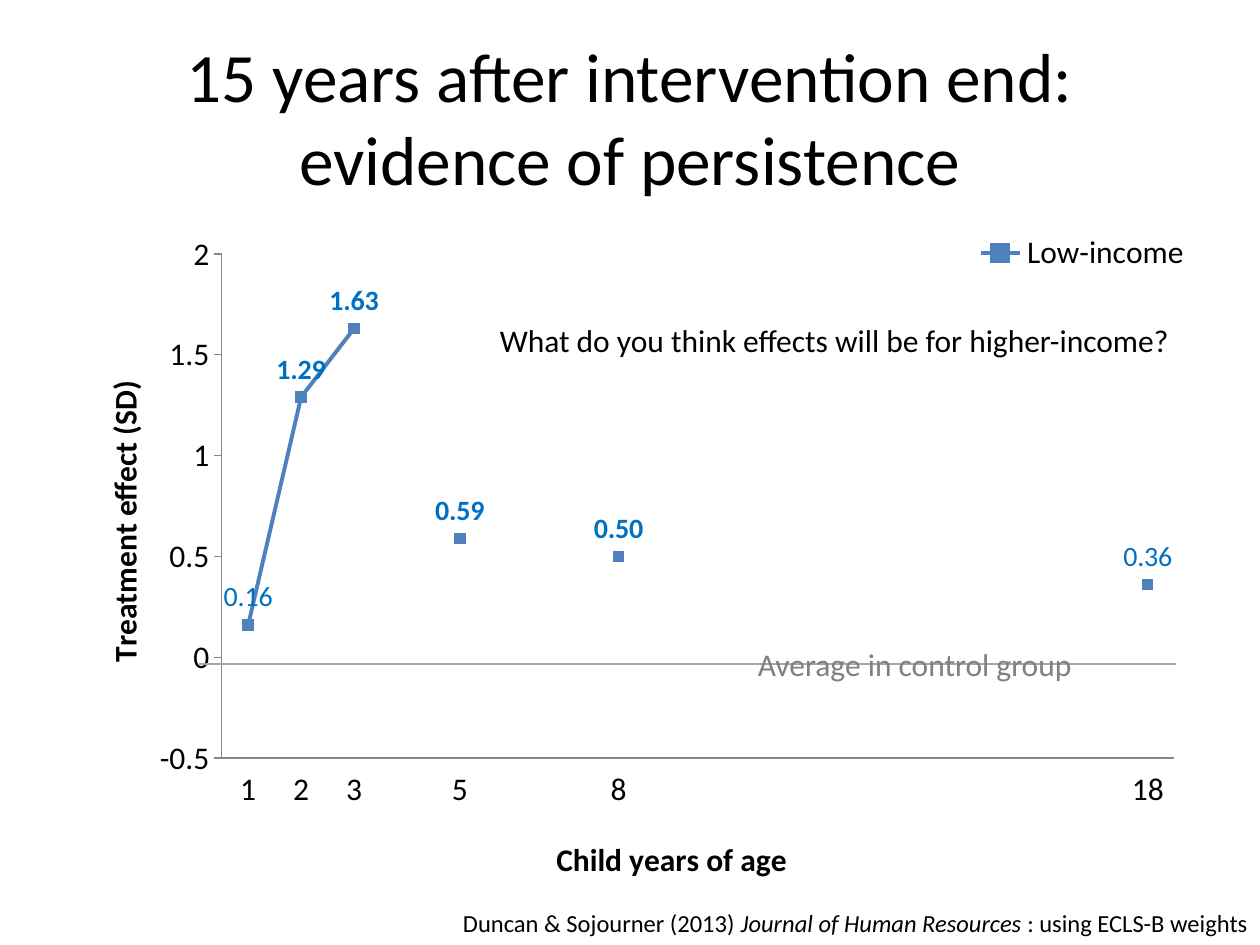
from lxml.etree import SubElement
from pptx import Presentation
from pptx.chart.data import CategoryChartData
from pptx.dml.color import RGBColor
from pptx.enum.chart import XL_CHART_TYPE as CT, XL_LABEL_POSITION as LP
from pptx.enum.chart import XL_AXIS_CROSSES, XL_LEGEND_POSITION
from pptx.enum.chart import XL_MARKER_STYLE, XL_TICK_LABEL_POSITION, XL_TICK_MARK
from pptx.enum.shapes import MSO_CONNECTOR
from pptx.enum.text import MSO_ANCHOR, PP_ALIGN
from pptx.oxml import parse_xml
from pptx.oxml.ns import nsdecls, qn
from pptx.util import Pt

COLORS = {
    "text": "000000",
    "series": "4F81BD",
    "label": "0070C0",
    "axis": "868686",
    "control": "808080",
    "control_line": "A6A6A6",
}
FONT = "Calibri"
EFFECTS = {1: 0.16, 2: 1.29, 3: 1.63, 5: 0.59, 8: 0.5, 18: 0.36}
BOLD_AGES = (2, 3, 5, 8)


def rgb(name):
    return RGBColor.from_string(COLORS[name])


def set_font(font, color="text", **formats):
    for key, value in {"name": FONT, **formats}.items():
        setattr(font, key, value)
    font.color.rgb = rgb(color)


def set_line(line, color, width):
    line.color.rgb = rgb(color)
    line.width = Pt(width)


def add_title(s, text, box, size):
    title = s.shapes.title
    title.left, title.top, title.width, title.height = map(Pt, box)
    tf = title.text_frame
    tf.text = text
    tf.vertical_anchor = MSO_ANCHOR.MIDDLE
    p = tf.paragraphs[0]
    p.alignment = PP_ALIGN.CENTER
    for r in p.runs:
        set_font(r.font, size=Pt(size))


def add_text(shapes, runs, box, size, color="text", align=PP_ALIGN.LEFT, wrap=True):
    tf = shapes.add_textbox(*map(Pt, box)).text_frame
    tf.word_wrap = wrap
    p = tf.paragraphs[0]
    p.alignment = align
    for text, italic in runs:
        r = p.add_run()
        r.text = text
        set_font(r.font, color, size=Pt(size), italic=italic)


def add_rule(shapes, x1, x2, y):
    rule = shapes.add_connector(MSO_CONNECTOR.STRAIGHT, Pt(x1), Pt(y), Pt(x2), Pt(y))
    set_line(rule.line, "control_line", 0.75)
    SubElement(rule._element.spPr, qn("a:effectLst"))


def place(element, index, **fractions):
    for old in element.findall(qn("c:layout")):
        element.remove(old)
    modes = {"xMode": "edge", "yMode": "edge"}
    if "w" in fractions:
        modes = {"layoutTarget": "inner", **modes}
    parts = "".join(f'<c:{k} val="{v}"/>' for k, v in {**modes, **fractions}.items())
    layout = f'<c:layout {nsdecls("c")}><c:manualLayout>{parts}</c:manualLayout></c:layout>'
    element.insert(index, parse_xml(layout))


def format_axis(axis, title, tick, x, y):
    formats = {
        "has_major_gridlines": False,
        "major_tick_mark": tick,
        "minor_tick_mark": XL_TICK_MARK.NONE,
        "tick_label_position": XL_TICK_LABEL_POSITION.LOW,
    }
    for key, value in formats.items():
        setattr(axis, key, value)
    set_line(axis.format.line, "axis", 0.75)
    set_font(axis.tick_labels.font, size=Pt(18))
    tf = axis.axis_title.text_frame
    tf.text = title
    set_font(tf.paragraphs[0].runs[0].font, size=Pt(18), bold=True)
    place(axis.axis_title._element, 1, x=x, y=y)


def format_series(series):
    series.smooth = False
    set_line(series.format.line, "series", 2.25)
    marker = series.marker
    marker.style, marker.size = XL_MARKER_STYLE.SQUARE, 6
    marker.format.fill.solid()
    marker.format.fill.fore_color.rgb = rgb("series")
    marker.format.line.color.rgb = rgb("series")
    labels = series.data_labels
    formats = {
        "show_value": True,
        "position": LP.ABOVE,
        "number_format": "#,##0.00",
        "number_format_is_linked": False,
    }
    for key, value in formats.items():
        setattr(labels, key, value)
    set_font(labels.font, "label", size=Pt(16))
    for age in BOLD_AGES:
        label = series.points[age - 1].data_label
        label.position = LP.ABOVE
        r = label.text_frame.paragraphs[0].add_run()
        r.text = f"{EFFECTS[age]:.2f}"
        set_font(r.font, "label", size=Pt(16), bold=True)


def add_effects_chart(s, box):
    ages = range(1, max(EFFECTS) + 1)
    data = CategoryChartData()
    data.categories = [str(age) if age in EFFECTS else "" for age in ages]
    data.add_series("Low-income", [EFFECTS.get(age) for age in ages])
    chart = s.shapes.add_chart(CT.LINE_MARKERS, *map(Pt, box), data).chart
    chart.has_title = False
    set_font(chart.font, size=Pt(18))
    chart.plots[0].vary_by_categories = False
    place(chart._chartSpace.chart.plotArea, 0, x=0.14, y=0.05, w=0.84, h=0.75)

    format_axis(chart.category_axis, "Child years of age", XL_TICK_MARK.NONE, 0.43, 0.91)
    value_axis = chart.value_axis
    format_axis(value_axis, "Treatment effect (SD)", XL_TICK_MARK.OUTSIDE, 0.03, 0.23)
    value_axis.axis_title.text_frame._txBody.bodyPr.set("rot", "-5400000")
    scale = {
        "minimum_scale": -0.5,
        "maximum_scale": 2,
        "major_unit": 0.5,
        "crosses": XL_AXIS_CROSSES.MINIMUM,
    }
    for key, value in scale.items():
        setattr(value_axis, key, value)

    chart.has_legend = True
    legend = chart.legend
    legend.position = XL_LEGEND_POSITION.CORNER
    legend.include_in_layout = True
    set_font(legend.font, size=Pt(18))
    place(legend._element, 1, x=0.8, y=0.01)
    format_series(chart.plots[0].series[0])


def main():
    prs = Presentation()
    prs.slide_width, prs.slide_height = Pt(720), Pt(540)
    s = prs.slides.add_slide(prs.slide_layouts[5])
    add_title(s, "15 years after intervention end:\vevidence of persistence",
              (36, 21.6, 648, 90), 39.6)
    add_effects_chart(s, (36, 126, 648, 384))
    source = [
        ("Duncan & Sojourner (2013) ", False),
        ("Journal of Human Resources ", True),
        (": using ECLS-B weights", False),
    ]
    add_text(s.shapes, source, (240, 515.5, 480, 24.5), 14, align=PP_ALIGN.RIGHT)
    control = s.shapes.add_group_shape().shapes
    add_rule(control, 114, 672, 379.5)
    add_text(control, [("Average in control group", False)],
             (426, 365, 216, 29), 18, "control")
    add_text(s.shapes, [("What do you think effects will be for higher-income?", False)],
             (278.5, 180, 402.5, 29), 18, wrap=False)
    prs.save("out.pptx")


if __name__ == "__main__":
    main()
